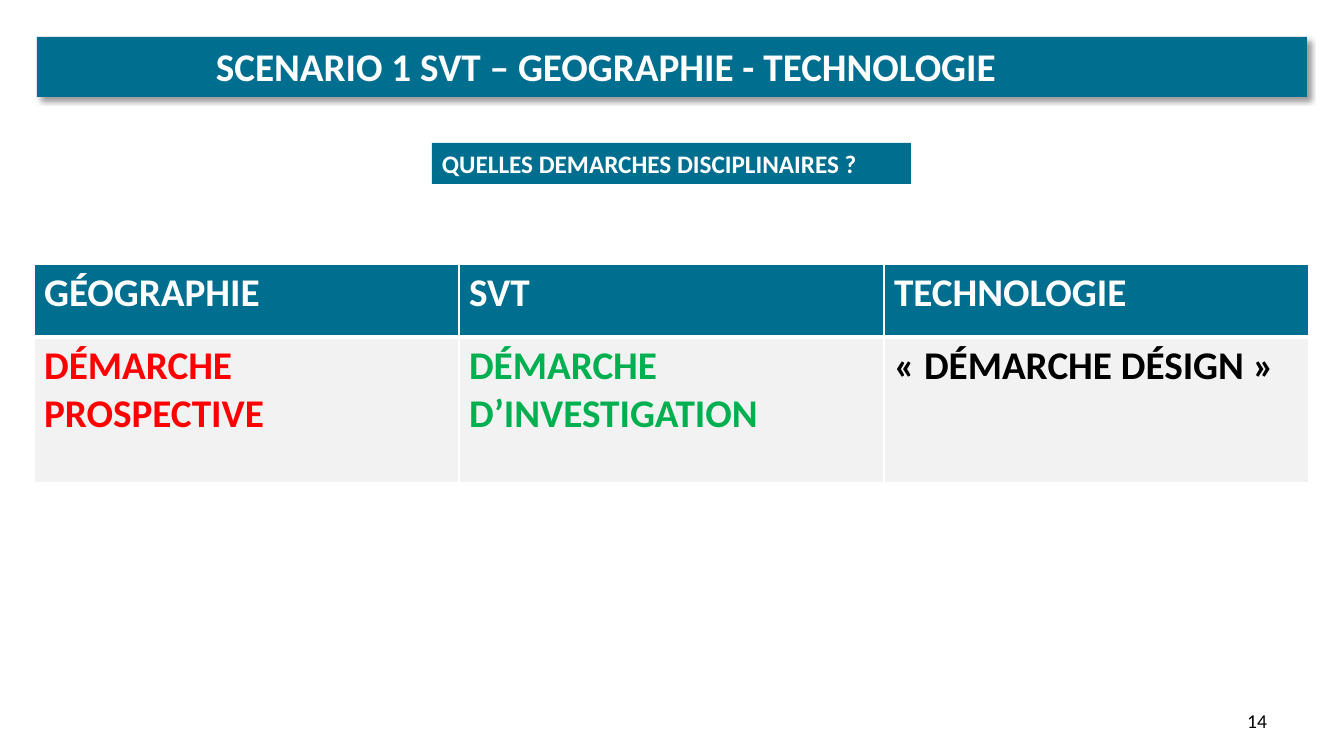
import pptx
import pptx.dml.color
import pptx.enum.shapes
import pptx.enum.text
import pptx.oxml
import pptx.oxml.ns
import pptx.util

EMU_PER_PX = 914400 / 100.8
COLORS = {"teal": "006E8E", "white": "FFFFFF", "grey": "F2F2F2",
          "red": "FF0000", "green": "00B050", "black": "000000"}
HEADING = {"size": 28, "bold": True}
ALIGN = pptx.enum.text.PP_ALIGN
ANCHOR = pptx.enum.text.MSO_ANCHOR


def px(*lengths):
    return [pptx.util.Emu(round(length * EMU_PER_PX)) for length in lengths]


def rgb(name):
    return pptx.dml.color.RGBColor.from_string(COLORS[name])


def xml(text):
    return pptx.oxml.parse_xml(text.replace(">", f" {pptx.oxml.ns.nsdecls('a')}>", 1))


class SlideBuilder:
    font_name = "Calibri"

    def __init__(self, presentation):
        self.slide = presentation.slides.add_slide(presentation.slide_layouts[6])

    def fill_text(self, frame, text, color, size=18, bold=False, align=ALIGN.LEFT):
        paragraph = frame.paragraphs[0]
        paragraph.alignment = align
        run = paragraph.add_run()
        run.text = text
        values = {"name": self.font_name, "size": pptx.util.Pt(size), "bold": bold}
        for key, value in values.items():
            setattr(run.font, key, value)
        run.font.color.rgb = rgb(color)

    def bar(self, box, fill):
        shape = self.slide.shapes.add_shape(
            pptx.enum.shapes.MSO_SHAPE.RECTANGLE, *px(*box))
        shape.shadow.inherit = False
        shape.fill.solid()
        shape.fill.fore_color.rgb = rgb(fill)
        shape.line.fill.background()
        return shape

    def drop_shadow(self, shape):
        effects = shape._element.spPr.find(pptx.oxml.ns.qn("a:effectLst"))
        effects.append(xml(
            '<a:outerShdw blurRad="50800" dist="38100" dir="2700000" algn="tl" rotWithShape="0">'
            f'<a:srgbClr val="{COLORS["black"]}"><a:alpha val="40000"/></a:srgbClr>'
            '</a:outerShdw>'))

    def text(self, box, text, color, wrap=True, anchor=ANCHOR.TOP, **style):
        frame = self.slide.shapes.add_textbox(*px(*box)).text_frame
        frame.word_wrap = wrap
        frame.vertical_anchor = anchor
        self.fill_text(frame, text, color, **style)

    def borders(self, cell, top, bottom):
        properties = cell._tc.get_or_add_tcPr()
        sides = {"lnL": 1, "lnR": 1, "lnT": top, "lnB": bottom}
        for index, (side, width) in enumerate(sides.items()):
            properties.insert(index, xml(
                f'<a:{side} w="{width * 12700}"><a:solidFill>'
                f'<a:srgbClr val="{COLORS["white"]}"/></a:solidFill></a:{side}>'))

    def table(self, left, top, column_width, row_heights, rows):
        column_count = len(rows[0])
        box = px(left, top, column_width * column_count, sum(row_heights))
        table = self.slide.shapes.add_table(len(rows), column_count, *box).table
        for column in table.columns:
            column.width = px(column_width)[0]
        for row_index, (height, row) in enumerate(zip(row_heights, rows)):
            table.rows[row_index].height = px(height)[0]
            header = row_index == 0
            for column_index, (text, color) in enumerate(row):
                cell = table.cell(row_index, column_index)
                cell.fill.solid()
                cell.fill.fore_color.rgb = rgb("teal" if header else "grey")
                self.borders(cell, *((1, 3) if header else (3, 1)))
                self.fill_text(cell.text_frame, text, color, **HEADING)


def main():
    presentation = pptx.Presentation()
    presentation.slide_width, presentation.slide_height = px(1344, 756)
    builder = SlideBuilder(presentation)

    # Title banner
    banner = builder.bar((37, 37, 1270, 60), "teal")
    builder.drop_shadow(banner)

    # Page number
    builder.text((1212, 701, 65, 40), "14", "black", size=14,
                 align=ALIGN.RIGHT, anchor=ANCHOR.MIDDLE)

    # Approaches by subject
    builder.table(34, 264, 425, (73, 146), [
        [("GÉOGRAPHIE", "white"), ("SVT", "white"), ("TECHNOLOGIE", "white")],
        [("DÉMARCHE PROSPECTIVE", "red"), ("DÉMARCHE D’INVESTIGATION", "green"),
         ("« DÉMARCHE DÉSIGN »", "black")],
    ])

    # Title and question
    builder.text((206, 37, 809, 57), "SCENARIO 1 SVT – GEOGRAPHIE - TECHNOLOGIE",
                 "white", wrap=False, **HEADING)
    question = builder.bar((432, 143, 479, 41), "teal")
    builder.fill_text(question.text_frame, "QUELLES DEMARCHES DISCIPLINAIRES ?",
                      "white", bold=True)

    presentation.save("out.pptx")


if __name__ == "__main__":
    main()
